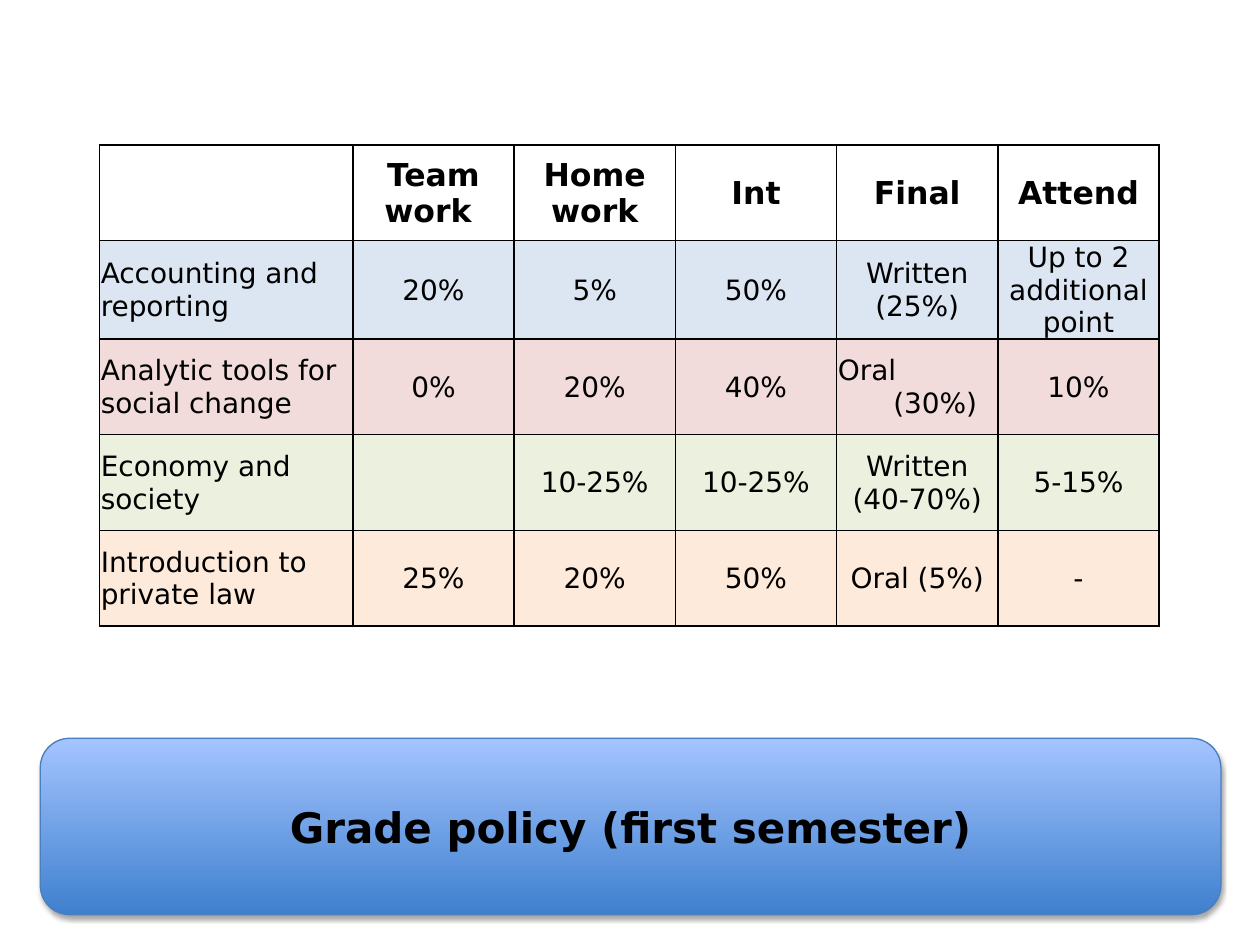
from lxml.etree import SubElement
from pptx import Presentation
from pptx.dml.color import RGBColor
from pptx.enum.shapes import MSO_SHAPE as Shape
from pptx.enum.text import MSO_ANCHOR as Anchor, PP_ALIGN as Align
from pptx.oxml import parse_xml
from pptx.oxml.ns import nsdecls, qn
from pptx.util import Inches, Pt

BLACK = RGBColor(0x00, 0x00, 0x00)
BLUE_DARK = RGBColor(0x3F, 0x80, 0xCE)
BLUE_LIGHT = RGBColor(0xA4, 0xC4, 0xFF)
BLUE_LINE = RGBColor(0x4B, 0x7E, 0xBC)
ROW_FILLS = [
    None,
    RGBColor(0xDC, 0xE6, 0xF2),
    RGBColor(0xF2, 0xDC, 0xDB),
    RGBColor(0xEB, 0xF1, 0xDE),
    RGBColor(0xFD, 0xEA, 0xDA),
]
GRADES = [
    ["", "Team work ", "Home work", "Int", "Final", "Attend"],
    ["Accounting and reporting", "20%", "5%", "50%", "Written (25%)", "Up to 2 additional point"],
    ["Analytic tools for social change", "0%", "20%", "40%", "Oral\v(30%)", "10%"],
    ["Economy and society", "", "10-25%", "10-25%", "Written (40-70%)", "5-15%"],
    ["Introduction to private law", "25%", "20%", "50%", "Oral (5%)", "-"],
]
COURSE_WIDTH, GRADE_WIDTH, ROW_HEIGHT = 2.01, 1.28, 0.76
CELL_FORMAT = {
    "vertical_anchor": Anchor.MIDDLE,
    "margin_left": Inches(0.01),
    "margin_right": Inches(0.01),
    "margin_top": Inches(0.01),
    "margin_bottom": 0,
}


def write(para, text, size, bold, align):
    para.text = text
    para.alignment = align
    for name, value in {"name": "DejaVu Sans", "size": Pt(size), "bold": bold}.items():
        setattr(para.font, name, value)
    para.font.color.rgb = BLACK
    for span in para.runs:
        for name, value in {"name": "DejaVu Sans", "size": Pt(size), "bold": bold}.items():
            setattr(span.font, name, value)
        span.font.color.rgb = BLACK


def add_borders(cell):
    properties = cell._tc.get_or_add_tcPr()
    for place, side in enumerate(["lnL", "lnR", "lnT", "lnB"]):
        border = parse_xml(
            f'<a:{side} {nsdecls("a")} w="{Pt(1)}"><a:solidFill>'
            f'<a:srgbClr val="{BLACK}"/></a:solidFill></a:{side}>'
        )
        properties.insert(place, border)


deck = Presentation()
deck.slide_width, deck.slide_height = Inches(10), Inches(7.5)
page = deck.slides.add_slide(deck.slide_layouts[6])

row_count, column_count = len(GRADES), len(GRADES[0])
table = page.shapes.add_table(
    row_count, column_count, Inches(0.79), Inches(1.15),
    Inches(COURSE_WIDTH + GRADE_WIDTH * (column_count - 1)), Inches(ROW_HEIGHT * row_count),
).table
table.first_row = table.horz_banding = False
for index, column in enumerate(table.columns):
    column.width = Inches(GRADE_WIDTH if index else COURSE_WIDTH)
for row, texts, color in zip(table.rows, GRADES, ROW_FILLS):
    row.height = Inches(ROW_HEIGHT)
    header = color is None
    for index, (cell, text) in enumerate(zip(row.cells, texts)):
        for name, value in CELL_FORMAT.items():
            setattr(cell, name, value)
        if header:
            cell.fill.background()
        else:
            cell.fill.solid()
            cell.fill.fore_color.rgb = color
        add_borders(cell)
        para = cell.text_frame.paragraphs[0]
        hanging = "\v" in text
        align = Align.CENTER if index and not hanging else Align.LEFT
        write(para, text, 18 if header else 16, header, align)
        if hanging:
            indent = Inches(0.44)
            para._p.get_or_add_pPr().set("marL", str(indent))
            para._p.get_or_add_pPr().set("indent", str(-indent))

banner = page.shapes.add_shape(
    Shape.ROUNDED_RECTANGLE, Inches(0.32), Inches(5.86), Inches(9.37), Inches(1.4)
)
banner.fill.gradient()
banner.fill.gradient_angle = 90
for stop, color in zip(banner.fill.gradient_stops, [BLUE_DARK, BLUE_LIGHT]):
    stop.color.rgb = color
for stop, position in zip(banner.fill.gradient_stops, [0, 1]):
    stop.position = position
banner.line.color.rgb = BLUE_LINE
banner.line.width = Pt(0.75)
banner.shadow.inherit = False
effects = banner._element.spPr.find(qn("a:effectLst"))
shadow = SubElement(
    effects, qn("a:outerShdw"),
    blurRad=str(Pt(3.1)), dist=str(Pt(1.8)), dir="5400000", rotWithShape="0",
)
shade = SubElement(shadow, qn("a:srgbClr"), val=str(BLACK))
SubElement(shade, qn("a:alpha"), val="35000")
banner.text_frame.word_wrap = True
banner.text_frame.vertical_anchor = Anchor.MIDDLE
write(banner.text_frame.paragraphs[0], "Grade policy (first semester)", 24, True, Align.CENTER)

deck.save("out.pptx")
